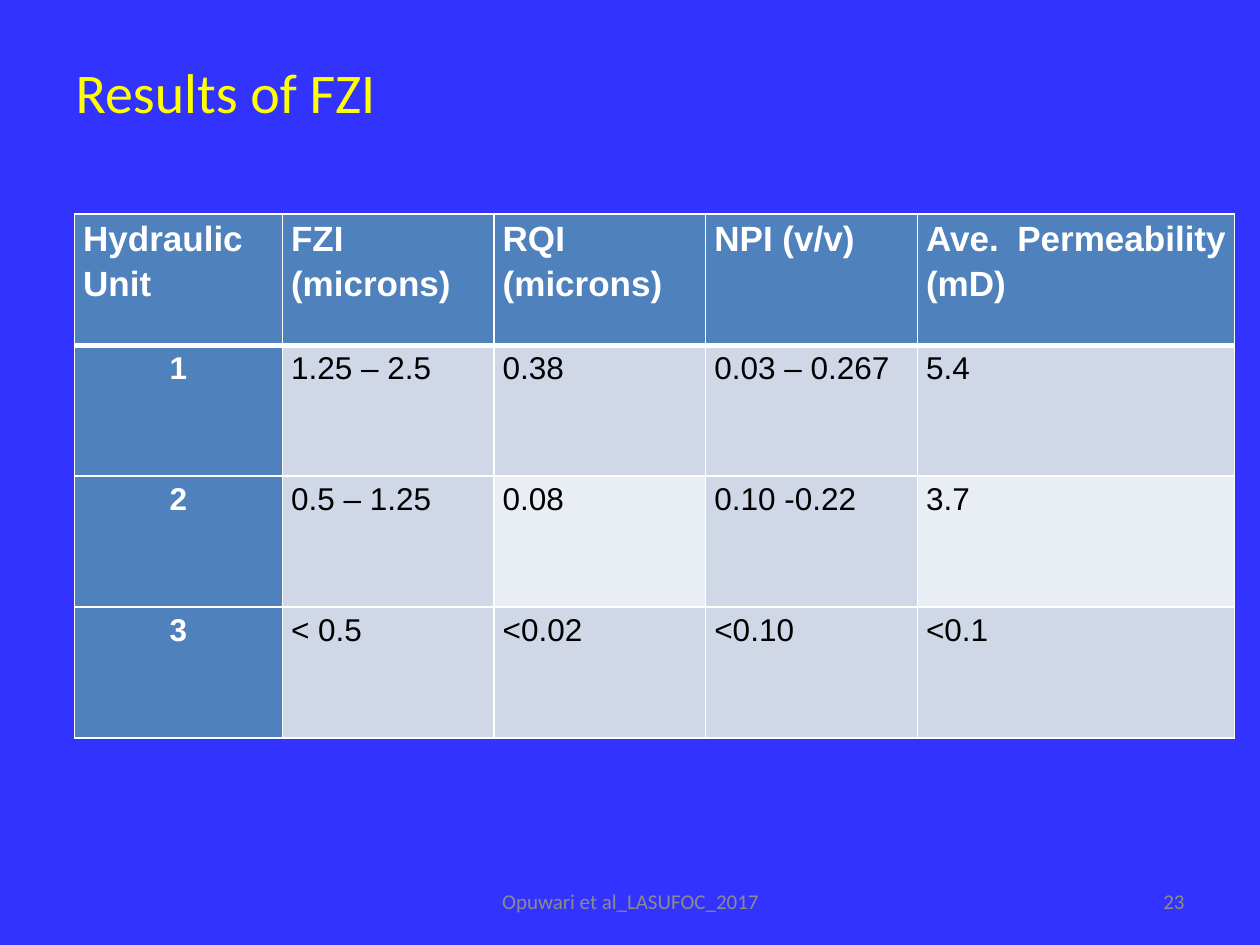
from dataclasses import dataclass

from lxml import etree
from pptx import Presentation
from pptx.dml.color import RGBColor
from pptx.enum.text import MSO_ANCHOR, PP_ALIGN
from pptx.oxml.ns import qn
from pptx.util import Inches, Pt

LEFT, CENTER, RIGHT = PP_ALIGN.LEFT, PP_ALIGN.CENTER, PP_ALIGN.RIGHT
JUSTIFY = PP_ALIGN.JUSTIFY
MIDDLE = MSO_ANCHOR.MIDDLE

BLUE, YELLOW, GRAY = "3333FF", "FFFF00", "8C8C8C"
WHITE, BLACK = "FFFFFF", "000000"
HEADING_FILL, BAND_FILL, LIGHT_FILL = "4F81BD", "D0D8E8", "E9EDF4"

COLUMN_WIDTHS = [1.65, 1.68, 1.68, 1.68, 2.52]
ROW_HEIGHT = 1.04
ROWS = [
    ["Hydraulic Unit", "FZI (microns)", "RQI (microns)", "NPI (v/v)",
     "Ave. Permeability (mD)"],
    ["1", "1.25 – 2.5", "0.38", "0.03 – 0.267", "5.4"],
    ["2", "0.5 – 1.25", "0.08", "0.10 -0.22", "3.7"],
    ["3", "˂ 0.5", "˂0.02", "˂0.10", "˂0.1"],
]
LIGHT_CELLS = {(2, 2), (2, 4)}


@dataclass
class TextStyle:
    font: str
    size: float
    color: str
    align: PP_ALIGN
    bold: bool = False
    line_spacing: float = 1.0


@dataclass
class FooterItem:
    text: str
    left: float
    width: float
    align: PP_ALIGN


FOOTER = [
    FooterItem("Opuwari et al_LASUFOC_2017", 3.42, 3.17, CENTER),
    FooterItem("23", 7.17, 2.33, RIGHT),
]


def rgb(color: str) -> RGBColor:
    return RGBColor.from_string(color)


def write(frame, text: str, style: TextStyle) -> None:
    para = frame.paragraphs[0]
    para.alignment = style.align
    para.line_spacing = style.line_spacing
    span = para.add_run()
    span.text = text
    span.font.name = style.font
    span.font.size = Pt(style.size)
    span.font.bold = style.bold
    span.font.color.rgb = rgb(style.color)


def place(shape, left: float, top: float, width: float, height: float) -> None:
    shape.left, shape.top = Inches(left), Inches(top)
    shape.width, shape.height = Inches(width), Inches(height)


def add_borders(cell, widths: dict[str, float]) -> None:
    """Draw white cell edges; keys are L, R, T and B in schema order."""
    properties = cell._tc.get_or_add_tcPr()
    for side, width in widths.items():
        line = etree.SubElement(properties, qn(f"a:ln{side}"), w=str(Pt(width)))
        fill = etree.SubElement(line, qn("a:solidFill"))
        etree.SubElement(fill, qn("a:srgbClr"), val=WHITE)


def format_cell(cell, row: int, column: int, text: str) -> None:
    is_header = row == 0
    is_heading = is_header or column == 0
    cell.margin_left = cell.margin_right = Inches(0.07)
    cell.margin_top = cell.margin_bottom = 0
    add_borders(cell, {"L": 1, "R": 1, "T": 3 if row == 1 else 1,
                       "B": 3 if is_header else 1})
    if is_heading:
        fill = HEADING_FILL
    else:
        fill = LIGHT_FILL if (row, column) in LIGHT_CELLS else BAND_FILL
    cell.fill.solid()
    cell.fill.fore_color.rgb = rgb(fill)
    write(cell.text_frame, text, TextStyle(
        font="Arial",
        size=20 if is_header else 18,
        color=WHITE if is_heading else BLACK,
        align=CENTER if column == 0 and not is_header else JUSTIFY,
        bold=is_heading,
        line_spacing=1.15,
    ))


def add_results_table(slide) -> None:
    frame = slide.shapes.add_table(
        len(ROWS), len(COLUMN_WIDTHS), Inches(0.59), Inches(1.7),
        Inches(sum(COLUMN_WIDTHS)), Inches(ROW_HEIGHT * len(ROWS)))
    table = frame.table
    for column, width in zip(table.columns, COLUMN_WIDTHS):
        column.width = Inches(width)
    for row, texts in enumerate(ROWS):
        table.rows[row].height = Inches(ROW_HEIGHT)
        for column, text in enumerate(texts):
            format_cell(table.cell(row, column), row, column, text)


def add_footer_item(slide, item: FooterItem) -> None:
    box = slide.shapes.add_textbox(
        Inches(item.left), Inches(6.95), Inches(item.width), Inches(0.4))
    box.text_frame.word_wrap = True
    box.text_frame.vertical_anchor = MIDDLE
    write(box.text_frame, item.text, TextStyle("Calibri", 12, GRAY, item.align))


def main() -> None:
    deck = Presentation()
    deck.slide_width, deck.slide_height = Inches(10), Inches(7.5)
    slide = deck.slides.add_slide(deck.slide_layouts.get_by_name("Title Only"))
    slide.background.fill.solid()
    slide.background.fill.fore_color.rgb = rgb(BLUE)

    title = slide.shapes.title
    place(title, 0.5, 0.3, 9, 0.85)
    title.text_frame.vertical_anchor = MIDDLE
    write(title.text_frame, "Results of FZI",
          TextStyle("Calibri", 32, YELLOW, LEFT))

    add_results_table(slide)
    for item in FOOTER:
        add_footer_item(slide, item)
    deck.save("out.pptx")


if __name__ == "__main__":
    main()
